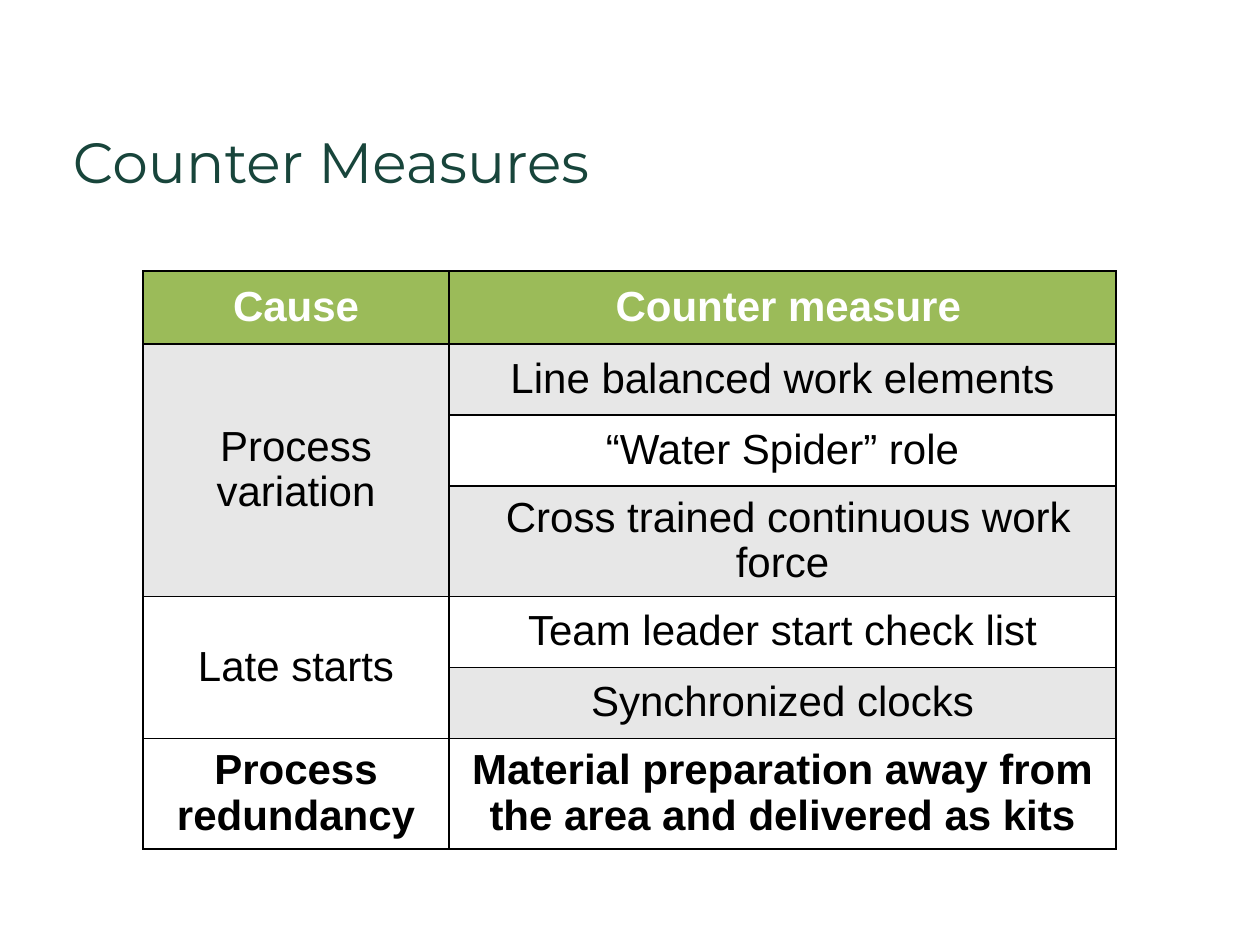
from lxml import etree
from pptx import Presentation
from pptx.dml.color import RGBColor
from pptx.enum.text import MSO_ANCHOR, PP_ALIGN
from pptx.oxml.ns import qn
from pptx.util import Pt

PX = 914400 / 126
MIDDLE = MSO_ANCHOR.MIDDLE
CENTER = PP_ALIGN.CENTER
GREEN, GREY, WHITE, BLACK = "9BBB59", "E7E7E7", "FFFFFF", "000000"


def px(*sizes):
    """Turn lengths in px into EMU."""
    return [round(size * PX) for size in sizes]


def style(font, name, size, color, bold=False):
    font.name = name
    font.size = Pt(size)
    font.bold = bold
    font.color.rgb = RGBColor.from_string(color)


prs = Presentation()
prs.slide_width, prs.slide_height = px(1260, 945)
slide = prs.slides.add_slide(prs.slide_layouts[6])

# Title
title = slide.shapes.add_textbox(*px(63, 121, 1134, 67))
frame = title.text_frame
frame.word_wrap = True
frame.margin_left = px(10)[0]
frame.text = "Counter Measures"
style(frame.paragraphs[0].runs[0].font, "Montserrat", 32.4, "18453B")

# Table: cause, counter measure, fill of each column
rows = [
    ("Cause", " Counter measure", GREEN, GREEN),
    ("Process variation", "Line balanced work elements", GREY, GREY),
    ("", "“Water Spider” role", GREY, WHITE),
    ("", " Cross trained continuous work force", GREY, GREY),
    ("Late starts", "Team leader start check list", WHITE, WHITE),
    ("", "Synchronized clocks", WHITE, GREY),
    ("Process redundancy",
     "Material preparation away from the area and delivered as kits",
     WHITE, WHITE),
]
widths = px(306, 667)
heights = px(73, 71, 71, 106, 71, 71, 106)
left, top = px(143, 271)
table = slide.shapes.add_table(
    len(rows), 2, left, top, sum(widths), sum(heights)).table
for col, width in zip(table.columns, widths):
    col.width = width
for row, height in zip(table.rows, heights):
    row.height = height
for first, last in ((1, 3), (4, 5)):
    table.cell(first, 0).merge(table.cell(last, 0))

for r, (cause, measure, *fills) in enumerate(rows):
    for c, text in enumerate((cause, measure)):
        cell = table.cell(r, c)
        cell.vertical_anchor = MIDDLE
        props = cell._tc.get_or_add_tcPr()
        for side in ("a:lnL", "a:lnR", "a:lnT", "a:lnB"):
            line = etree.SubElement(props, qn(side), w=str(Pt(1)))
            paint = etree.SubElement(line, qn("a:solidFill"))
            etree.SubElement(paint, qn("a:srgbClr"), val=BLACK)
        cell.fill.solid()
        cell.fill.fore_color.rgb = RGBColor.from_string(fills[c])
        if text:
            cell.text_frame.text = text
            para = cell.text_frame.paragraphs[0]
            para.alignment = CENTER
            para.line_spacing = 0.97
            style(para.runs[0].font, "Arial", 24,
                  WHITE if r == 0 else BLACK, r in (0, len(rows) - 1))

prs.save("out.pptx")
